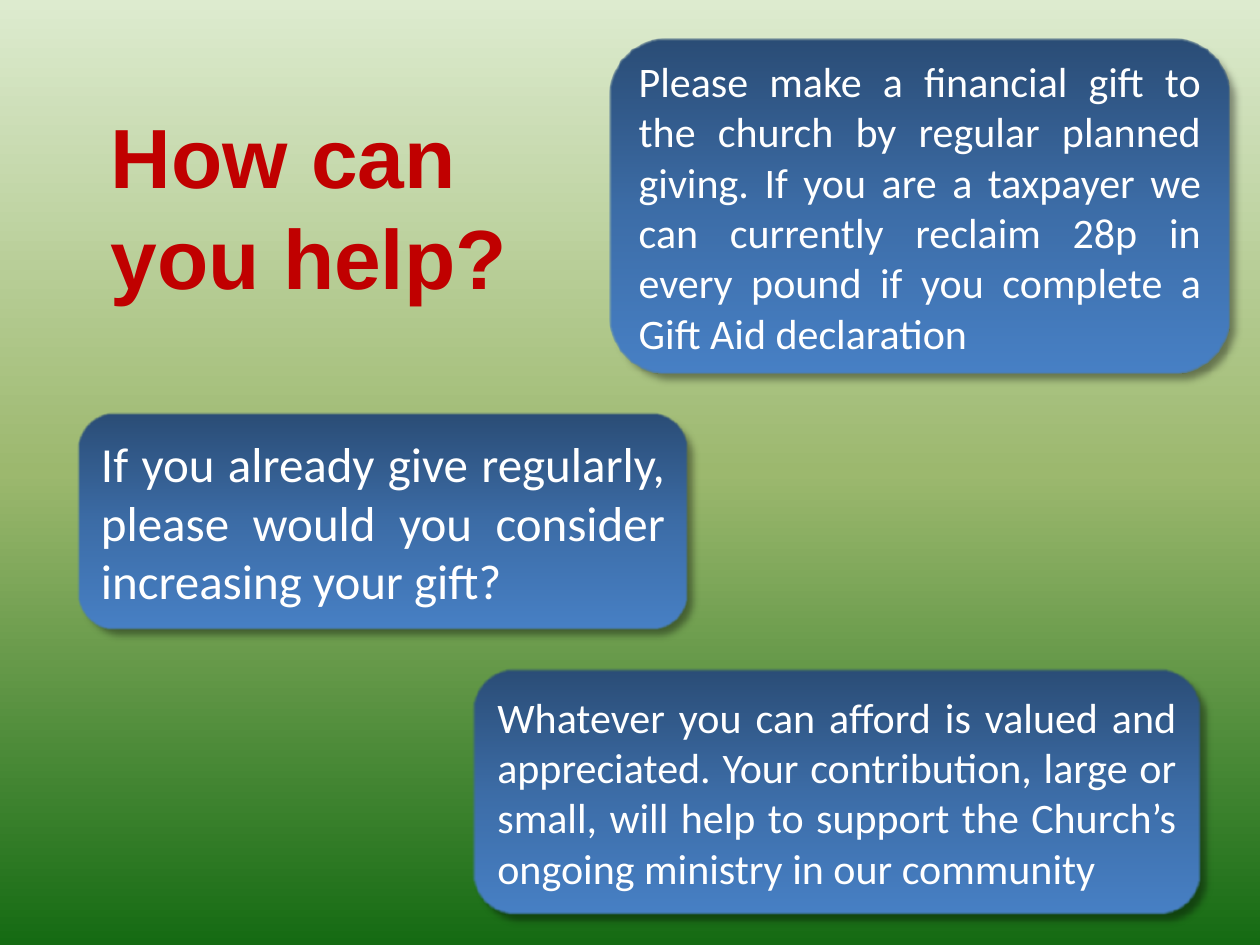
from copy import deepcopy

from lxml import etree
from pptx import Presentation
from pptx.dml.color import RGBColor
from pptx.enum.shapes import MSO_SHAPE
from pptx.enum.text import MSO_ANCHOR, MSO_AUTO_SIZE, PP_ALIGN
from pptx.oxml import parse_xml
from pptx.oxml.ns import nsdecls, qn
from pptx.util import Pt

PX = 914400 / 126
WIDTH, HEIGHT = 1260, 945

WHITE = RGBColor(0xFF, 0xFF, 0xFF)
RED = RGBColor(0xC0, 0x00, 0x00)
NAVY = RGBColor(0x17, 0x37, 0x5E)
GREENS = [RGBColor(0xDD, 0xEB, 0xCF), RGBColor(0x9C, 0xB8, 0x6E), RGBColor(0x15, 0x6B, 0x13)]
BLUES = [RGBColor(0x2A, 0x4C, 0x75), RGBColor(0x3C, 0x6C, 0xA6), RGBColor(0x47, 0x80, 0xC5)]

TITLE_BOX = (98, 98, 462, 217)
PANELS = [
    ((473, 669, 728, 246), 24,
     "Whatever you can afford is valued and appreciated. Your contribution, large or "
     "small, will help to support the Church’s ongoing ministry in our community"),
    ((78, 413, 610, 217), 28,
     "If you already give regularly, please would you consider increasing your gift?"),
    ((610, 39, 620, 335), 24,
     "Please make a financial gift to the church by regular planned giving. If you are "
     "a taxpayer we can currently reclaim 28p in every pound if you complete a "
     "Gift Aid declaration"),
]


def emu(*lengths):
    return [round(length * PX) for length in lengths]


def fill_downwards(fill, element, colors):
    """Give the fill a top-to-bottom gradient with evenly spaced colours."""
    fill.gradient()
    fill.gradient_angle = 270
    stop_list = next(element.iter(qn("a:gsLst")))
    while len(stop_list) < len(colors):
        stop_list.append(deepcopy(stop_list[0]))
    for index, (stop, color) in enumerate(zip(fill.gradient_stops, colors)):
        stop.color.rgb = color
        stop.position = index / (len(colors) - 1)


def add_soft_shadow(shape):
    shape.shadow.inherit = False
    effects = shape._element.spPr.find(qn("a:effectLst"))
    shadow = etree.SubElement(effects, qn("a:outerShdw"), blurRad=str(Pt(4)),
                              dist=str(Pt(5)), dir="2700000", algn="tl", rotWithShape="0")
    color = etree.SubElement(shadow, qn("a:srgbClr"), val="000000")
    etree.SubElement(color, qn("a:alpha"), val="40000")
    etree.SubElement(effects, qn("a:softEdge"), rad=str(Pt(1)))


def add_panel(slide, box, size, text):
    panel = slide.shapes.add_shape(MSO_SHAPE.ROUNDED_RECTANGLE, *emu(*box))
    fill_downwards(panel.fill, panel._element, BLUES)
    panel.line.fill.background()
    add_soft_shadow(panel)
    frame = panel.text_frame
    frame.word_wrap = True
    frame.vertical_anchor = MSO_ANCHOR.MIDDLE
    paragraph = frame.paragraphs[0]
    paragraph.text = text
    paragraph.alignment = PP_ALIGN.JUSTIFY
    font = paragraph.font
    font.name, font.size, font.color.rgb = "Calibri", Pt(size), WHITE


def place_title(slide, box):
    title = slide.shapes.title
    title.left, title.top, title.width, title.height = emu(*box)
    frame = title.text_frame
    frame.word_wrap = True
    frame.vertical_anchor = MSO_ANCHOR.TOP
    frame.auto_size = MSO_AUTO_SIZE.SHAPE_TO_FIT_TEXT
    paragraph = frame.paragraphs[0]
    paragraph.alignment = PP_ALIGN.LEFT
    run = paragraph.add_run()
    run.text = "How can you help?"
    font = run.font
    font.name, font.size, font.bold, font.color.rgb = "Arial", Pt(48), True, RED
    outline = parse_xml(
        f'<a:ln {nsdecls("a")} w="{Pt(0.75)}"><a:solidFill>'
        f'<a:srgbClr val="{NAVY}"/></a:solidFill></a:ln>')
    run._r.get_or_add_rPr().insert(0, outline)


def build_help_slide(presentation):
    slide = presentation.slides.add_slide(presentation.slide_layouts[5])
    fill_downwards(slide.background.fill, slide._element, GREENS)
    for box, size, text in PANELS:
        add_panel(slide, box, size, text)
    place_title(slide, TITLE_BOX)


def main():
    presentation = Presentation()
    presentation.slide_width, presentation.slide_height = emu(WIDTH, HEIGHT)
    build_help_slide(presentation)
    presentation.save("out.pptx")


if __name__ == "__main__":
    main()
